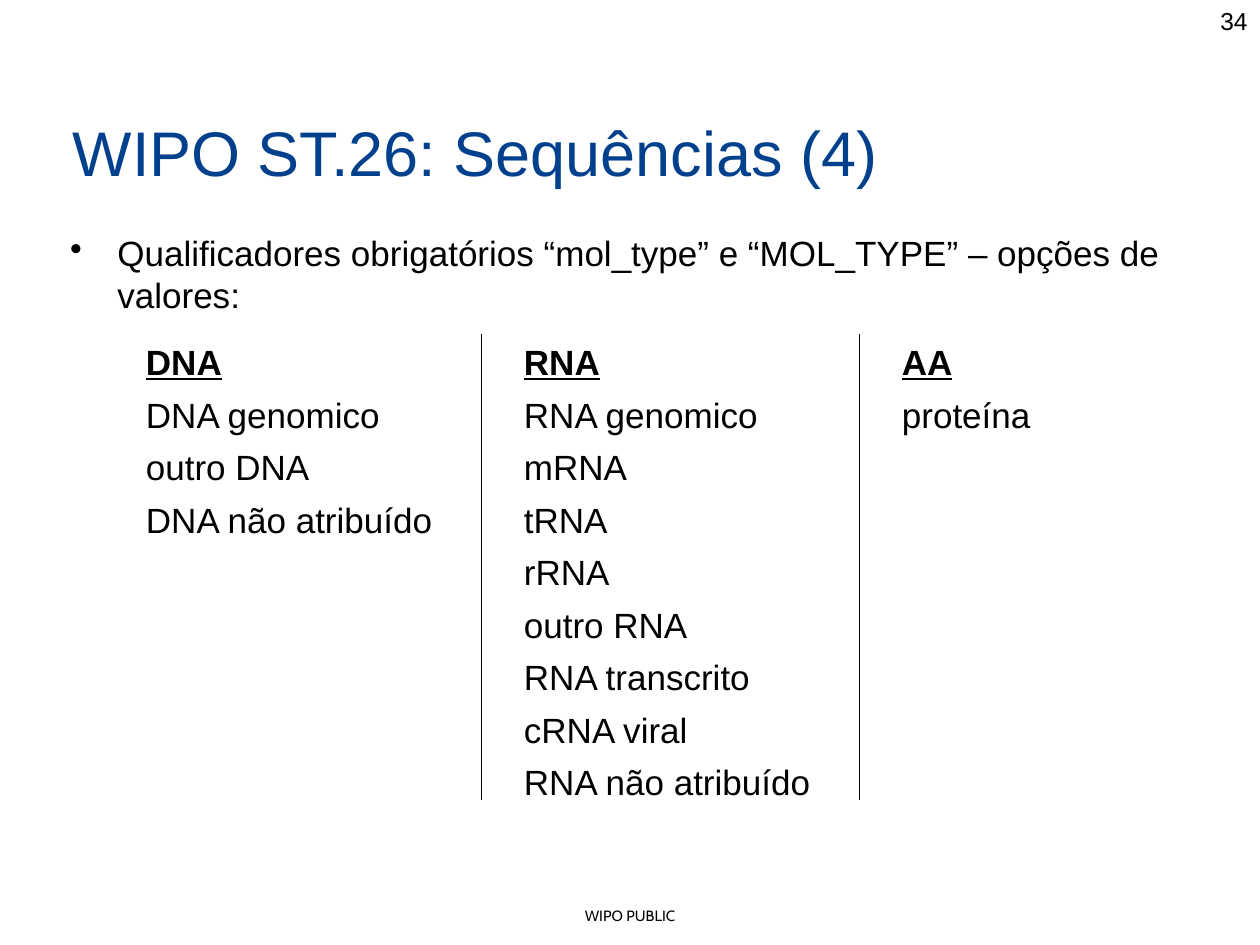
from dataclasses import dataclass

from lxml.etree import SubElement
from pptx import Presentation
from pptx.dml.color import RGBColor
from pptx.enum.shapes import MSO_CONNECTOR
from pptx.enum.text import PP_ALIGN as Align
from pptx.oxml.ns import qn
from pptx.util import Pt

COLORS = {"text": "000000", "title": "00408C"}
COLUMN_STEP = 216
MOLECULES = {
    "DNA": ["DNA genomico", "outro DNA", "DNA não atribuído"],
    "RNA": ["RNA genomico", "mRNA", "tRNA", "rRNA", "outro RNA",
            "RNA transcrito", "cRNA viral", "RNA não atribuído"],
    "AA": ["proteína"],
}


@dataclass
class Box:
    left: float
    top: float
    width: float
    height: float


@dataclass
class Style:
    size: float
    color: str = "text"
    font: str = "Arial"
    align: Align = Align.LEFT


def add_frame(slide, box: Box):
    frame = slide.shapes.add_textbox(
        Pt(box.left), Pt(box.top), Pt(box.width), Pt(box.height)).text_frame
    frame.word_wrap = True
    return frame


def apply_style(paragraph, style: Style) -> None:
    paragraph.alignment = style.align
    font = paragraph.font
    font.size = Pt(style.size)
    font.name = style.font
    font.color.rgb = RGBColor.from_string(COLORS[style.color])


def add_label(slide, box: Box, text: str, style: Style) -> None:
    paragraph = add_frame(slide, box).paragraphs[0]
    paragraph.text = text
    apply_style(paragraph, style)


def add_bullet(slide, box: Box, text: str, style: Style) -> None:
    paragraph = add_frame(slide, box).paragraphs[0]
    paragraph.text = text
    paragraph.line_spacing = Pt(24)
    properties = paragraph._p.get_or_add_pPr()
    indent = Pt(27)
    properties.set("marL", str(indent))
    properties.set("indent", str(-indent))
    SubElement(properties, qn("a:buChar"), char="•")
    apply_style(paragraph, style)


def add_columns(slide, box: Box, style: Style) -> None:
    """Write the values row by row, aligned on evenly spaced tab stops."""
    frame = add_frame(slide, box)
    row_count = 1 + max(map(len, MOLECULES.values()))
    for row in range(row_count):
        paragraph = frame.add_paragraph() if row else frame.paragraphs[0]
        paragraph.line_spacing = Pt(24)
        if row:
            paragraph.space_before = Pt(6)
        tabs = SubElement(paragraph._p.get_or_add_pPr(), qn("a:tabLst"))
        for column in range(1, len(MOLECULES)):
            SubElement(tabs, qn("a:tab"), pos=str(Pt(column * COLUMN_STEP)), algn="l")
        apply_style(paragraph, style)
        if row:
            cells = [values[row - 1] if row <= len(values) else ""
                     for values in MOLECULES.values()]
            paragraph.text = "\t".join(cells).rstrip("\t")
        else:
            add_headings(paragraph)


def add_headings(paragraph) -> None:
    for column, heading in enumerate(MOLECULES):
        if column:
            paragraph.add_run().text = "\t"
        run = paragraph.add_run()
        run.text = heading
        run.font.bold = True
        run.font.underline = True


def add_divider(slide, x: float, top: float, bottom: float) -> None:
    divider = slide.shapes.add_connector(
        MSO_CONNECTOR.STRAIGHT, Pt(x), Pt(top), Pt(x), Pt(bottom))
    divider.line.color.rgb = RGBColor.from_string(COLORS["text"])
    divider.line.width = Pt(0.75)
    SubElement(divider._element.spPr, qn("a:effectLst"))


def main() -> None:
    deck = Presentation()
    deck.slide_width, deck.slide_height = Pt(720), Pt(540)
    slide = deck.slides.add_slide(deck.slide_layouts[6])
    body = Style(20)

    add_label(slide, Box(0, 514.8, 720, 17.3), "WIPO PUBLIC",
              Style(8.5, font="Cabin", align=Align.CENTER))
    add_label(slide, Box(552, 0, 168, 37.5), "34", Style(14, align=Align.RIGHT))
    add_label(slide, Box(34.5, 61.5, 648, 86), "WIPO ST.26: Sequências (4)",
              Style(36, "title"))
    add_bullet(slide, Box(33, 129, 684, 55.5),
               "Qualificadores obrigatórios “mol_type” e “MOL_TYPE” – opções de valores:",
               body)
    add_columns(slide, Box(76.3, 191, 521, 317.5), body)
    for column in range(1, len(MOLECULES)):
        add_divider(slide, 59 + column * COLUMN_STEP, 191, 457)

    deck.save("out.pptx")


if __name__ == "__main__":
    main()
